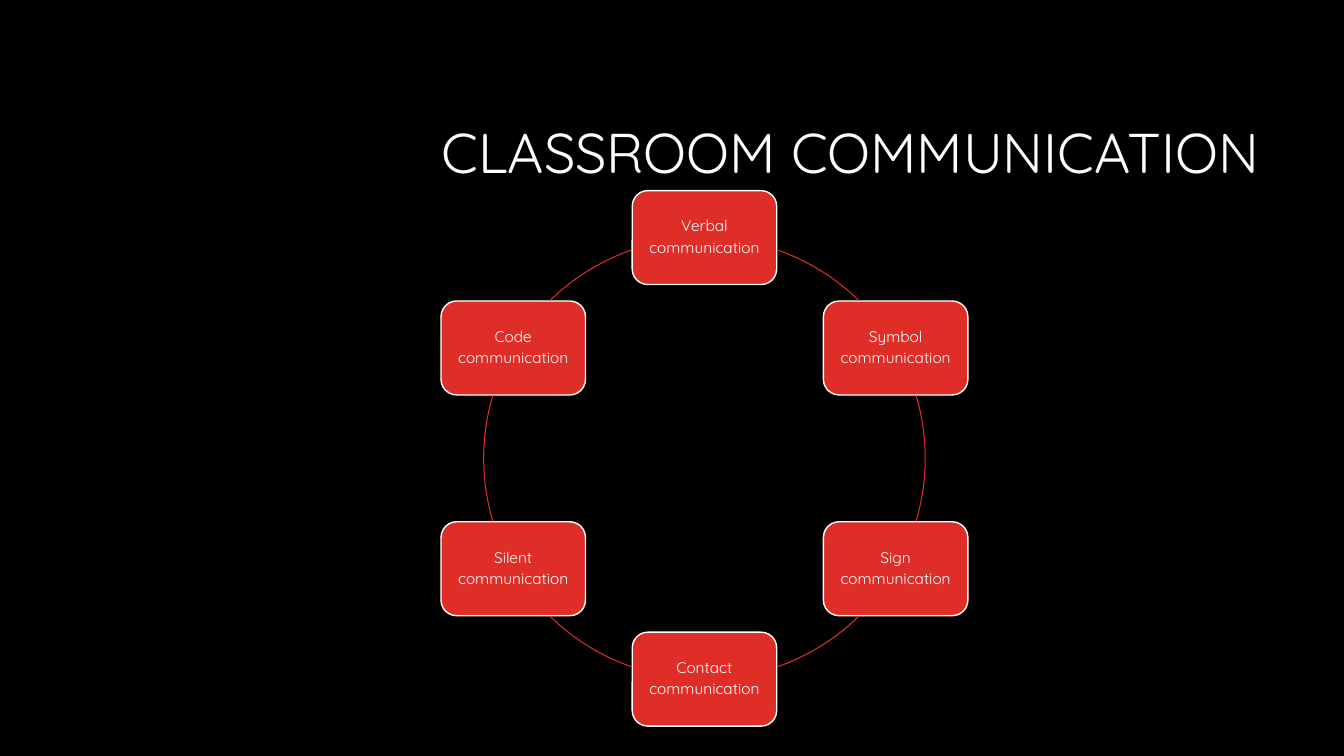
import math
from dataclasses import dataclass

from pptx import Presentation
from pptx import util as u
from pptx.dml.color import RGBColor
from pptx.enum import shapes, text


@dataclass(frozen=True)
class Theme:
    font: str = "Quicksand"
    black: RGBColor = RGBColor.from_string("000000")
    white: RGBColor = RGBColor.from_string("FFFFFF")
    red: RGBColor = RGBColor.from_string("DF2E28")
    title_size: float = 40
    card_size: float = 11


class SlideBuilder:
    def __init__(self, page, theme):
        self.page = page
        self.theme = theme
        page.background.fill.solid()
        page.background.fill.fore_color.rgb = theme.black

    def set_wording(self, box, wording, size, align, inset, space_after=0):
        frame = box.text_frame
        frame.word_wrap = True
        frame.vertical_anchor = text.MSO_ANCHOR.MIDDLE
        frame.margin_left = frame.margin_right = u.Pt(inset)
        frame.margin_top = frame.margin_bottom = u.Pt(3.6)
        frame.text = wording
        for para in frame.paragraphs:
            para.alignment = align
            para.line_spacing = 0.9
            para.space_after = u.Pt(space_after)
            for span in para.runs:
                span.font.name = self.theme.font
                span.font.size = u.Pt(size)
                span.font.color.rgb = self.theme.white

    def title(self, wording, left, top, width, height):
        box = self.page.shapes.add_textbox(*map(u.Pt, (left, top, width, height)))
        self.set_wording(box, wording, self.theme.title_size, text.PP_ALIGN.RIGHT, 7.2)

    def card(self, wording, center_x, center_y, width, height):
        left, top = center_x - width / 2, center_y - height / 2
        box = self.page.shapes.add_shape(
            shapes.MSO_SHAPE.ROUNDED_RECTANGLE, *map(u.Pt, (left, top, width, height)))
        box.shadow.inherit = False
        box.fill.solid()
        box.fill.fore_color.rgb = self.theme.red
        box.line.color.rgb = self.theme.white
        box.line.width = u.Pt(1)
        self.set_wording(box, wording, self.theme.card_size, text.PP_ALIGN.CENTER, 3.6, 3.5)

    def arc(self, center_x, center_y, radius, start, end):
        """Draw a clockwise arc; angles are degrees from three o'clock."""
        bounds = (center_x - radius, center_y - radius, 2 * radius, 2 * radius)
        arc = self.page.shapes.add_shape(shapes.MSO_SHAPE.ARC, *map(u.Pt, bounds))
        arc.shadow.inherit = False
        arc.fill.background()
        arc.line.color.rgb = self.theme.red
        arc.line.width = u.Pt(0.75)
        # Arc adjustments count 60000 units per degree, scaled by 100000.
        for index, angle in enumerate((start, end)):
            arc.adjustments[index] = angle % 360 * 0.6


def main():
    deck = Presentation()
    deck.slide_width, deck.slide_height = u.Pt(960), u.Pt(540)
    page = deck.slides.add_slide(deck.slide_layouts[6])
    builder = SlideBuilder(page, Theme())
    builder.title("CLASSROOM COMMUNICATION", 228.2, 60.5, 678.2, 101.5)

    center_x, center_y, radius = 503.2, 327.4, 157.7
    kinds = ["Verbal", "Symbol", "Sign", "Contact", "Silent", "Code"]
    for index, kind in enumerate(kinds):
        angle = math.radians(index * 360 / len(kinds) - 90)
        builder.card(f"{kind}\ncommunication",
                     center_x + radius * math.cos(angle),
                     center_y + radius * math.sin(angle), 103.2, 67.1)

    right_side_gaps = [(-70.6, -45.7), (-16.5, 16.5), (45.7, 70.6)]
    for half_turn in (0, 180):
        for start, end in right_side_gaps:
            builder.arc(center_x, center_y, radius, start + half_turn, end + half_turn)

    deck.save("out.pptx")


if __name__ == "__main__":
    main()
